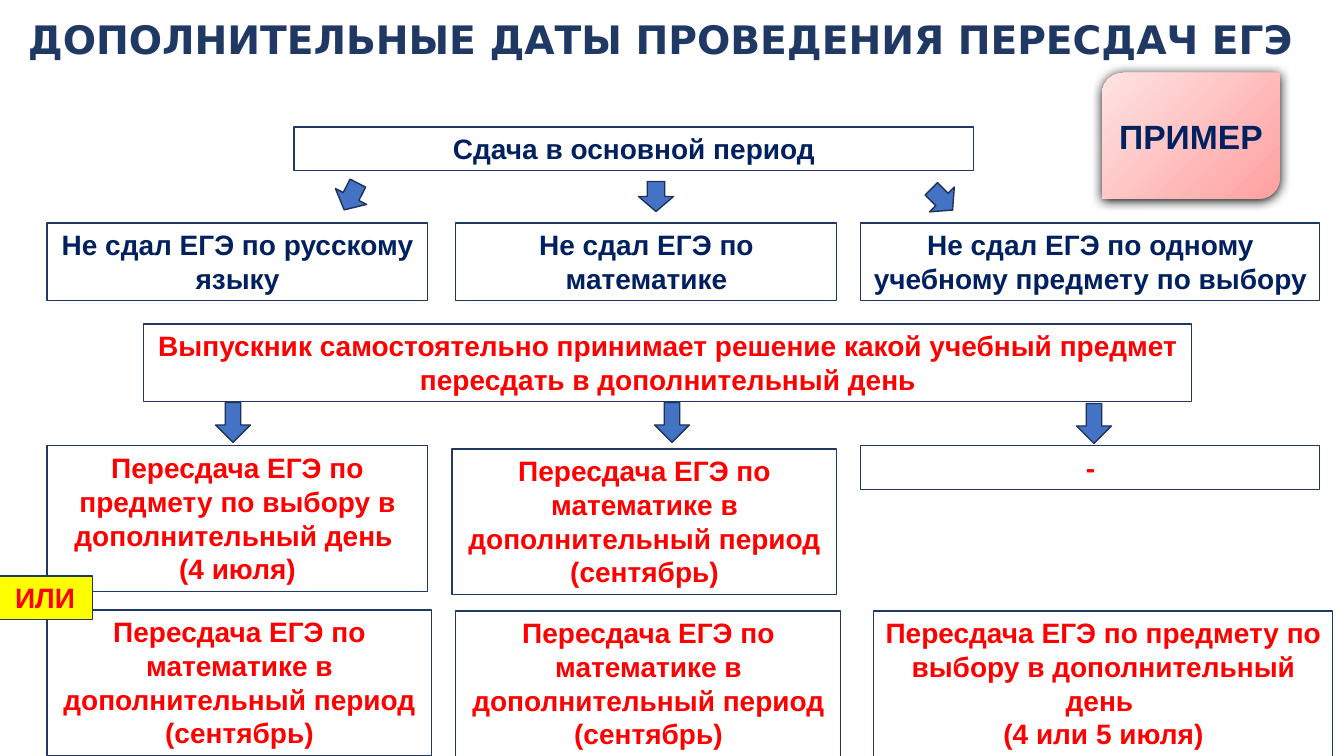
from lxml import etree
from pptx import Presentation
from pptx.dml.color import RGBColor
from pptx.enum.shapes import MSO_SHAPE as Shape
from pptx.enum.text import MSO_ANCHOR as Anchor, MSO_AUTO_SIZE as AutoSize, PP_ALIGN as Align
from pptx.oxml.ns import qn
from pptx.util import Pt

PX = 914400 / 100.8
TITLE_BLUE = RGBColor(0x20, 0x38, 0x64)
NAVY = RGBColor(0x00, 0x20, 0x60)
RED = RGBColor(0xFF, 0x00, 0x00)
YELLOW = RGBColor(0xFF, 0xFF, 0x00)
ARROW_FILL = RGBColor(0x44, 0x72, 0xC4)
ARROW_EDGE = RGBColor(0x1E, 0x32, 0x56)
PINK_DARK = RGBColor(0xFF, 0xA0, 0xA0)
PINK_LIGHT = RGBColor(0xFF, 0xE3, 0xE3)


def emu(*lengths):
    return [round(length * PX) for length in lengths]


def write(frame, lines, color, align=Align.CENTER, frame_format=None, **font_format):
    frame_values = {"word_wrap": True, **(frame_format or {})}
    for attribute, value in frame_values.items():
        setattr(frame, attribute, value)
    font_values = {"name": "Arial", "size": Pt(20), "bold": True, **font_format}
    for index, line in enumerate(lines):
        paragraph = frame.add_paragraph() if index else frame.paragraphs[0]
        paragraph.alignment = align
        run = paragraph.add_run()
        run.text = line
        run.font.color.rgb = color
        for attribute, value in font_values.items():
            setattr(run.font, attribute, value)


deck = Presentation()
deck.slide_width, deck.slide_height = emu(1344, 756)
slide = deck.slides.add_slide(deck.slide_layouts[6])
shapes = slide.shapes

heading = shapes.add_textbox(*emu(18, 14, 1301, 55)).text_frame
write(heading, ["ДОПОЛНИТЕЛЬНЫЕ ДАТЫ ПРОВЕДЕНИЯ ПЕРЕСДАЧ ЕГЭ"], TITLE_BLUE, Align.LEFT,
      {"vertical_anchor": Anchor.MIDDLE}, name="DejaVu Sans", size=Pt(28))
heading.paragraphs[0].line_spacing = 0.9

arrows = [
    (336, 179, 30, 117, 0.5),
    (641, 179, 30, 90, 0.5),
    (927, 182, 30, 45, 0.5),
    (213, 405, 40, 90, 0.44),
    (652, 405, 40, 90, 0.44),
    (1074, 406, 40, 90, 0.44),
]
for left, top, length, rotation, shaft in arrows:
    arrow = shapes.add_shape(Shape.RIGHT_ARROW, *emu(left, top, length, 35))
    arrow.shadow.inherit = False
    arrow.rotation = rotation
    arrow.adjustments[0] = shaft
    arrow.fill.solid()
    arrow.fill.fore_color.rgb = ARROW_FILL
    arrow.line.color.rgb = ARROW_EDGE
    arrow.line.width = Pt(1)

math_september = ["Пересдача ЕГЭ по математике в дополнительный период (сентябрь)"]
elective = "Пересдача ЕГЭ по предмету по выбору в дополнительный день "
ONE_LINE, TWO_LINES, FOUR_LINES = 44, 78, 146

steps = [
    (294, 127, 680, ONE_LINE, NAVY, ["Сдача в основной период"]),
    (47, 223, 381, TWO_LINES, NAVY, ["Не сдал ЕГЭ по русскому языку"]),
    (456, 223, 381, TWO_LINES, NAVY, ["Не сдал ЕГЭ по математике"]),
    (861, 223, 459, TWO_LINES, NAVY, ["Не сдал ЕГЭ по одному учебному предмету по выбору"]),
    (144, 324, 1048, TWO_LINES, RED,
     ["Выпускник самостоятельно принимает решение какой учебный предмет "
      "пересдать в дополнительный день"]),
    (47, 446, 381, FOUR_LINES, RED, [elective, "(4 июля)"]),
    (452, 449, 385, FOUR_LINES, RED, math_september),
    (861, 446, 459, ONE_LINE, RED, ["-"]),
    (47, 610, 385, FOUR_LINES, RED, math_september),
    (456, 611, 385, FOUR_LINES, RED, math_september),
    (874, 611, 459, FOUR_LINES, RED, [elective, "(4 или 5 июля)"]),
    (-3, 576, 96, ONE_LINE, RED, ["ИЛИ"]),
]
for left, top, width, height, color, lines in steps:
    step = shapes.add_textbox(*emu(left, top, width, height))
    step.line.color.rgb = TITLE_BLUE
    step.line.width = Pt(0.75)
    write(step.text_frame, lines, color, frame_format={"auto_size": AutoSize.SHAPE_TO_FIT_TEXT})
    if lines == ["ИЛИ"]:
        step.fill.solid()
        step.fill.fore_color.rgb = YELLOW

example = shapes.add_shape(Shape.ROUND_2_DIAG_RECTANGLE, *emu(1102, 73, 178, 126))
example.fill.gradient()
example.fill.gradient_angle = 135
for stop, color, position in zip(example.fill.gradient_stops, (PINK_DARK, PINK_LIGHT), (0, 1)):
    stop.color.rgb = color
    stop.position = position
example.line.fill.background()
example.shadow.inherit = False
effects = example._element.spPr.find(qn("a:effectLst"))
shadow = etree.SubElement(effects, qn("a:outerShdw"), blurRad=str(Pt(8.5)),
                          dist=str(Pt(1)), dir="5400000", algn="t", rotWithShape="0")
etree.SubElement(shadow, qn("a:srgbClr"), val="000000")
write(example.text_frame, ["ПРИМЕР"], NAVY,
      frame_format={"vertical_anchor": Anchor.MIDDLE}, size=Pt(24))

deck.save("out.pptx")
